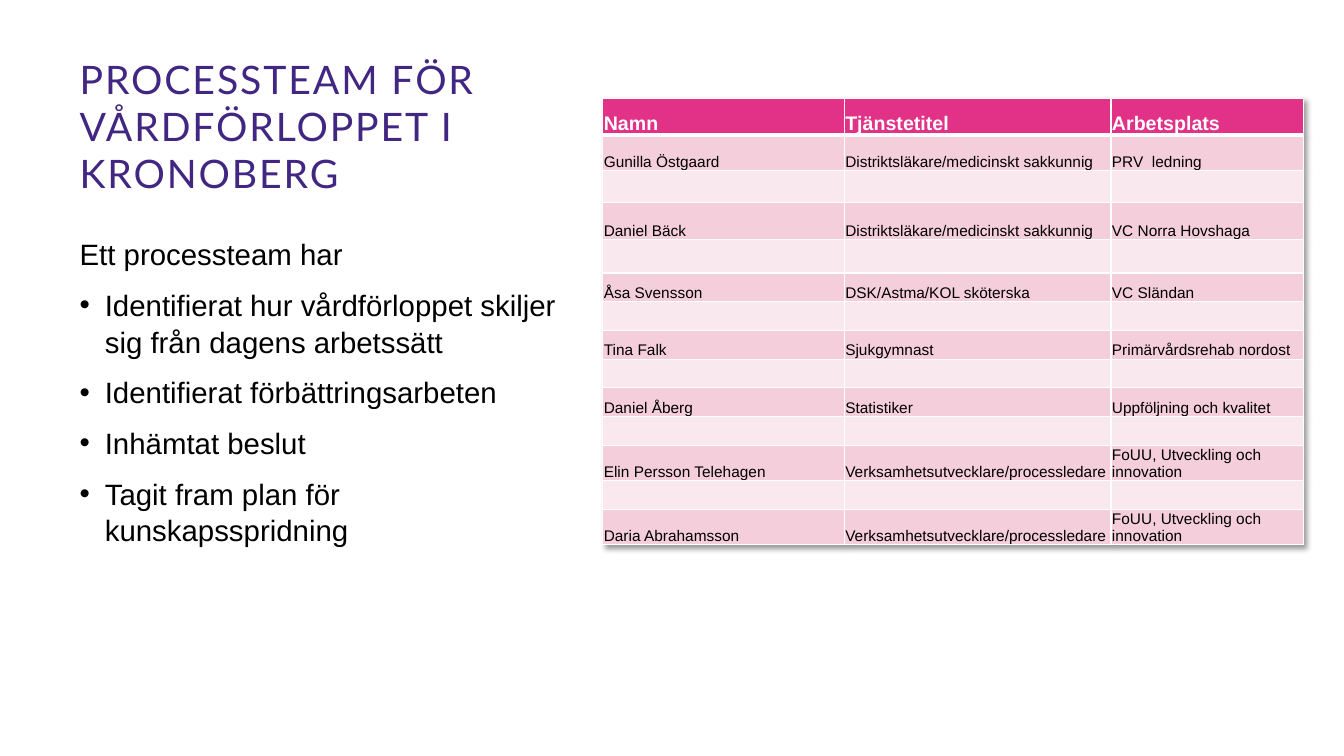
from lxml import etree
from pptx import Presentation
from pptx.dml.color import RGBColor
from pptx.enum import text
from pptx.oxml import ns
from pptx.util import Pt

PURPLE, PINK, ROSE, PALE = "412682", "E13288", "F4CEDA", "F9E8ED"
WHITE, BLACK = "FFFFFF", "000000"

TITLE = ["PROCESSTEAM FÖR ", "VÅRDFÖRLOPPET I KRONOBERG"]
INTRO = "Ett processteam har"
RESULTS = [
    "Identifierat hur vårdförloppet skiljer sig från dagens arbetssätt",
    "Identifierat förbättringsarbeten",
    "Inhämtat beslut",
    "Tagit fram plan för kunskapsspridning",
]
HEADINGS = ("Namn", "Tjänstetitel", "Arbetsplats")
TEAM = [
    ("Gunilla Östgaard", "Distriktsläkare/medicinskt sakkunnig", "PRV  ledning"),
    ("Daniel Bäck", "Distriktsläkare/medicinskt sakkunnig", "VC Norra Hovshaga"),
    ("Åsa Svensson", "DSK/Astma/KOL sköterska", "VC Sländan"),
    ("Tina Falk", "Sjukgymnast", "Primärvårdsrehab nordost"),
    ("Daniel Åberg", "Statistiker", "Uppföljning och kvalitet"),
    ("Elin Persson Telehagen", "Verksamhetsutvecklare/processledare",
     "FoUU, Utveckling och innovation"),
    ("Daria Abrahamsson", "Verksamhetsutvecklare/processledare",
     "FoUU, Utveckling och innovation"),
]
COL_WIDTHS = [172.5, 190.5, 137.5]
ROW_HEIGHTS = [25.7, 25.7, 22.7, 26.7, 23.7] + [20.5] * 6 + [25, 20.5, 25.3]


def color(value):
    return RGBColor.from_string(value)


def add_child(parent, tag, **attrs):
    return etree.SubElement(parent, ns.qn(tag), attrs)


def add_run(p, words, size, ink, font="Arial", bold=False):
    r = p.add_run()
    r.text = words
    r.font.name, r.font.size, r.font.bold = font, Pt(size), bold
    r.font.color.rgb = color(ink)
    return r


def place(sp, left, top, width, height, anchor):
    sp.left, sp.top, sp.width, sp.height = Pt(left), Pt(top), Pt(width), Pt(height)
    tf = sp.text_frame
    tf.word_wrap = True
    tf.auto_size = text.MSO_AUTO_SIZE.NONE
    tf.vertical_anchor = anchor
    return tf


def fill_title(sp):
    tf = place(sp, 49.7, 39.6, 380.9, 104.4, text.MSO_ANCHOR.BOTTOM)
    p = tf.paragraphs[0]
    p.alignment = text.PP_ALIGN.LEFT
    p.line_spacing = 1.0
    for i, line in enumerate(TITLE):
        if i:
            p.add_line_break()
        r = add_run(p, line, 28, PURPLE, "Lato")
        r.font._element.set("spc", "140")


def fill_body(sp):
    tf = place(sp, 49.7, 164.2, 365.8, 318.2, text.MSO_ANCHOR.TOP)
    for i, line in enumerate([INTRO] + RESULTS):
        p = tf.add_paragraph() if i else tf.paragraphs[0]
        p.alignment = text.PP_ALIGN.LEFT
        p.space_before, p.line_spacing = Pt(10), 1.04
        pPr = p._p.get_or_add_pPr()
        indent = Pt(18) if i else 0
        pPr.set("marL", str(indent))
        pPr.set("indent", str(-indent))
        if i:
            add_child(pPr, "a:buChar", char="•")
        else:
            add_child(pPr, "a:buNone")
        add_run(p, line, 21, BLACK)


def set_borders(cell, top, bottom):
    """Draw white cell edges; top and bottom are widths in points."""
    tcPr = cell._tc.get_or_add_tcPr()
    for side, width in (("L", 1), ("R", 1), ("T", top), ("B", bottom)):
        ln = add_child(tcPr, f"a:ln{side}", w=str(Pt(width)))
        add_child(add_child(ln, "a:solidFill"), "a:srgbClr", val=WHITE)


def fill_cell(cell, words, row):
    header = row == 0
    set_borders(cell, 3 if row == 1 else 1, 3 if header else 1)
    cell.fill.solid()
    cell.fill.fore_color.rgb = color(PINK if header else ROSE if row % 2 else PALE)
    cell.margin_left = cell.margin_right = cell.margin_top = Pt(0.7)
    cell.margin_bottom = 0
    cell.vertical_anchor = text.MSO_ANCHOR.BOTTOM
    p = cell.text_frame.paragraphs[0]
    if words:
        add_run(p, words, 14 if header else 11, WHITE if header else BLACK, bold=header)
    else:
        add_child(p._p, "a:endParaRPr", sz="1100")


def add_shadow(table):
    effects = etree.Element(ns.qn("a:effectLst"))
    shadow = add_child(effects, "a:outerShdw", blurRad=str(Pt(4)), dist=str(Pt(3)),
                       dir="2700000", algn="tl", rotWithShape="0")
    add_child(add_child(shadow, "a:srgbClr", val=BLACK), "a:alpha", val="40000")
    table._tbl.tblPr.insert(0, effects)


def add_team_table(slide):
    rows = [HEADINGS]
    for member in TEAM:
        rows += [member, ("",) * len(HEADINGS)]
    rows.pop()
    table = slide.shapes.add_table(
        len(rows), len(HEADINGS), Pt(430.6), Pt(70.6),
        Pt(sum(COL_WIDTHS)), Pt(sum(ROW_HEIGHTS))).table
    for column, width in zip(table.columns, COL_WIDTHS):
        column.width = Pt(width)
    for i, (row, height) in enumerate(zip(rows, ROW_HEIGHTS)):
        table.rows[i].height = Pt(height)
        for j, words in enumerate(row):
            fill_cell(table.cell(i, j), words, i)
    add_shadow(table)


def main():
    prs = Presentation()
    prs.slide_width, prs.slide_height = Pt(960), Pt(540)
    slide = prs.slides.add_slide(prs.slide_layouts[1])
    fill_title(slide.shapes.title)
    add_team_table(slide)
    fill_body(slide.placeholders[1])
    prs.save("out.pptx")


if __name__ == "__main__":
    main()
